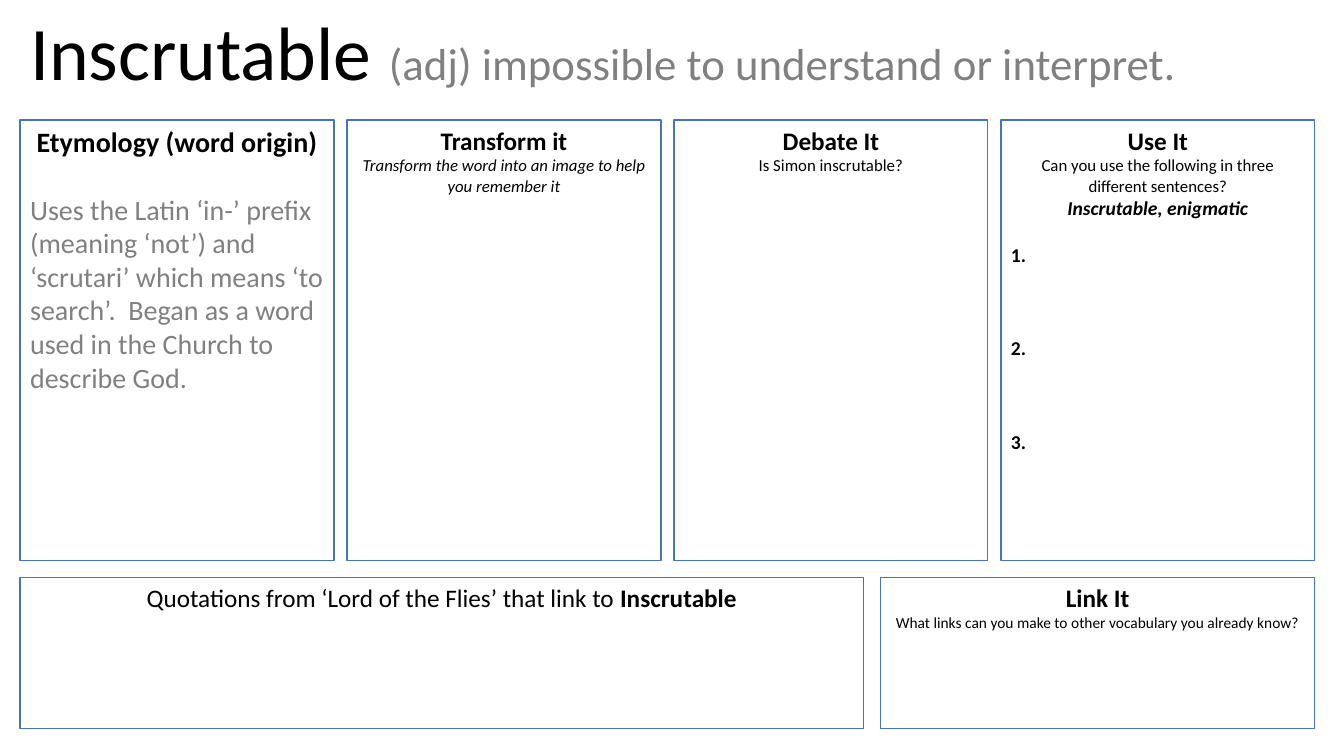
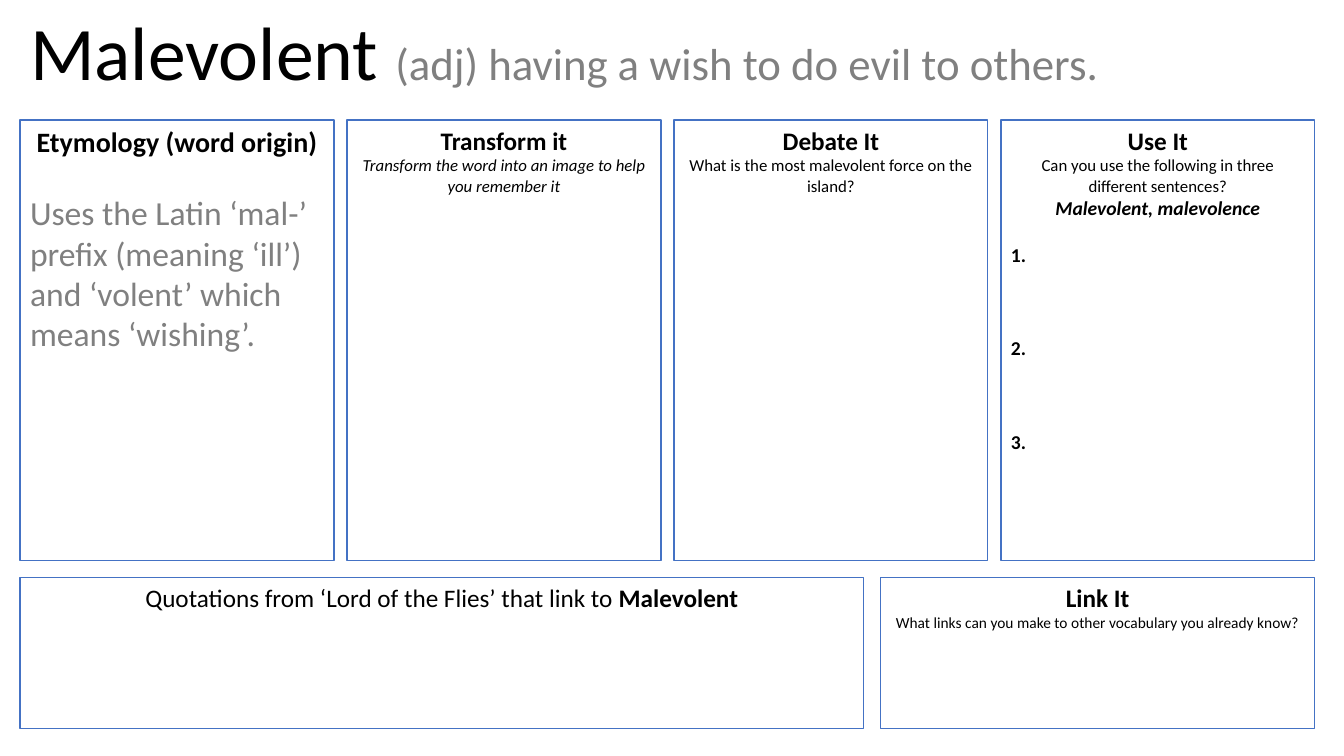
from dataclasses import dataclass

from lxml import etree
from pptx import Presentation
from pptx.dml.color import RGBColor
from pptx.enum.shapes import MSO_SHAPE
from pptx.enum.text import MSO_ANCHOR, MSO_AUTO_SIZE, PP_ALIGN
from pptx.oxml.ns import qn
from pptx.util import Inches, Pt

RECTANGLE = MSO_SHAPE.RECTANGLE
TOP = MSO_ANCHOR.TOP
GROW = MSO_AUTO_SIZE.SHAPE_TO_FIT_TEXT
LEFT, CENTER = PP_ALIGN.LEFT, PP_ALIGN.CENTER

SLIDE_WIDTH, SLIDE_HEIGHT = 13.33, 7.5
MARGIN = 0.2
COLUMN_GAP, ROW_GAP = 0.13, 0.17
ROW_SHARES = (4.37, 1.5)
BOTTOM_SHARES = (0.66, 0.34)
NUMBER_INDENT = 0.38
FONT = "Calibri"
BLACK, GRAY, WHITE, BLUE = "000000", "808080", "FFFFFF", "4472C4"


@dataclass
class Box:
    """A rectangular area in inches."""
    left: float
    top: float
    width: float
    height: float

    def emu(self):
        """Return the position and size as slide lengths."""
        return [Inches(length) for length in (self.left, self.top, self.width, self.height)]

    def columns(self, shares, gap):
        """Split the box side by side in the given proportions."""
        unit = (self.width - gap * (len(shares) - 1)) / sum(shares)
        return [Box(self.left + unit * sum(shares[:index]) + gap * index, self.top,
                    unit * share, self.height)
                for index, share in enumerate(shares)]

    def rows(self, shares, gap):
        """Split the box from top to bottom in the given proportions."""
        unit = (self.height - gap * (len(shares) - 1)) / sum(shares)
        return [Box(self.left, self.top + unit * sum(shares[:index]) + gap * index,
                    self.width, unit * share)
                for index, share in enumerate(shares)]


@dataclass
class Words:
    """A piece of text with one format."""
    text: str
    size: int
    bold: bool = False
    italic: bool = False
    color: str = BLACK


@dataclass
class Line:
    """A paragraph made of pieces of text."""
    pieces: list
    alignment: int = CENTER
    space_before: int = 0
    numbered: bool = False


@dataclass
class Vocabulary:
    """The content that changes from word to word."""
    word: str
    meaning: str
    origin: str
    origin_size: int
    debate: str
    forms: str


VOCABULARY = [
    Vocabulary(
        "Inscrutable", "(adj) impossible to understand or interpret.",
        "Uses the Latin ‘in-’ prefix (meaning ‘not’) and ‘scrutari’ which means "
        "‘to search’.  Began as a word used in the Church to describe God.", 20,
        "Is Simon inscrutable?", "Inscrutable, enigmatic"),
    Vocabulary(
        "Malevolent", "(adj) having a wish to do evil to others.",
        "Uses the Latin ‘mal-’ prefix (meaning ‘ill’) and ‘volent’ which means ‘wishing’.", 24,
        "What is the most malevolent force on the island?", "Malevolent, malevolence"),
]


def rgb(color):
    """Turn a hex string into a colour."""
    return RGBColor.from_string(color)


def number_paragraph(paragraph):
    """Give a paragraph an automatic number and a hanging indent."""
    properties = paragraph._p.get_or_add_pPr()
    properties.set("marL", str(Inches(NUMBER_INDENT)))
    properties.set("indent", str(-Inches(NUMBER_INDENT)))
    etree.SubElement(properties, qn("a:buFont"), typeface="+mj-lt")
    etree.SubElement(properties, qn("a:buAutoNum"), type="arabicPeriod")


def write_lines(text_frame, lines):
    """Fill a text frame with formatted paragraphs."""
    text_frame.word_wrap = True
    text_frame.vertical_anchor = TOP
    for index, line in enumerate(lines):
        paragraph = text_frame.add_paragraph() if index else text_frame.paragraphs[0]
        paragraph.alignment = line.alignment
        paragraph.space_before = Pt(line.space_before)
        if line.numbered:
            number_paragraph(paragraph)
        for piece in line.pieces:
            run = paragraph.add_run()
            run.text = piece.text
            font = run.font
            font.name, font.size = FONT, Pt(piece.size)
            font.bold, font.italic = piece.bold, piece.italic
            font.color.rgb = rgb(piece.color)


def add_title(slide, box, entry):
    """Place the word and its meaning."""
    text_frame = slide.shapes.add_textbox(*box.emu()).text_frame
    write_lines(text_frame, [Line([Words(entry.word + " ", 54),
                                   Words(entry.meaning, 32, color=GRAY)], LEFT)])
    text_frame.auto_size = GROW


def add_panel(slide, box, lines):
    """Place an outlined panel with text from its top edge."""
    shape = slide.shapes.add_shape(RECTANGLE, *box.emu())
    shape.shadow.inherit = False
    shape.fill.solid()
    shape.fill.fore_color.rgb = rgb(WHITE)
    shape.line.color.rgb = rgb(BLUE)
    shape.line.width = Pt(1)
    write_lines(shape.text_frame, lines)


def heading(text, size=18):
    """Return a bold panel heading."""
    return Line([Words(text, size, bold=True)])


def add_activities(slide, box, entry):
    """Place the four tall activity panels."""
    numbers = [Line([Words(" ", 14, bold=True)], LEFT, space, True) for space in (17, 50, 50)]
    panels = [
        [heading("Etymology (word origin)", 20),
         Line([Words(entry.origin, entry.origin_size, color=GRAY)], LEFT, 24)],
        [heading("Transform it"),
         Line([Words("Transform the word into an image to help you remember it", 12,
                     italic=True)])],
        [heading("Debate It"), Line([Words(entry.debate, 12)])],
        [heading("Use It"),
         Line([Words("Can you use the following in three different sentences?", 12)]),
         Line([Words(entry.forms, 14, bold=True, italic=True)]), *numbers],
    ]
    for column, lines in zip(box.columns([1] * len(panels), COLUMN_GAP), panels):
        add_panel(slide, column, lines)


def add_connections(slide, box, entry):
    """Place the quotation and link panels."""
    quotations, links = box.columns(BOTTOM_SHARES, ROW_GAP)
    add_panel(slide, quotations, [
        Line([Words("Quotations from ‘Lord of the Flies’ that link to ", 18),
              Words(entry.word, 18, bold=True)])])
    add_panel(slide, links, [
        heading("Link It"),
        Line([Words("What links can you make to other vocabulary you already know?", 11)])])


def add_vocabulary_slide(presentation, entry):
    """Build one slide for one word."""
    slide = presentation.slides.add_slide(presentation.slide_layouts[6])
    add_title(slide, Box(MARGIN, 0, SLIDE_WIDTH - MARGIN, 1.01), entry)
    body = Box(MARGIN, 1.19, 12.84, 6.04)
    activities, connections = body.rows(ROW_SHARES, ROW_GAP)
    add_activities(slide, activities, entry)
    add_connections(slide, connections, entry)


def main():
    """Build and save the presentation."""
    presentation = Presentation()
    presentation.slide_width = Inches(SLIDE_WIDTH)
    presentation.slide_height = Inches(SLIDE_HEIGHT)
    for entry in VOCABULARY:
        add_vocabulary_slide(presentation, entry)
    presentation.save("out.pptx")


if __name__ == "__main__":
    main()
